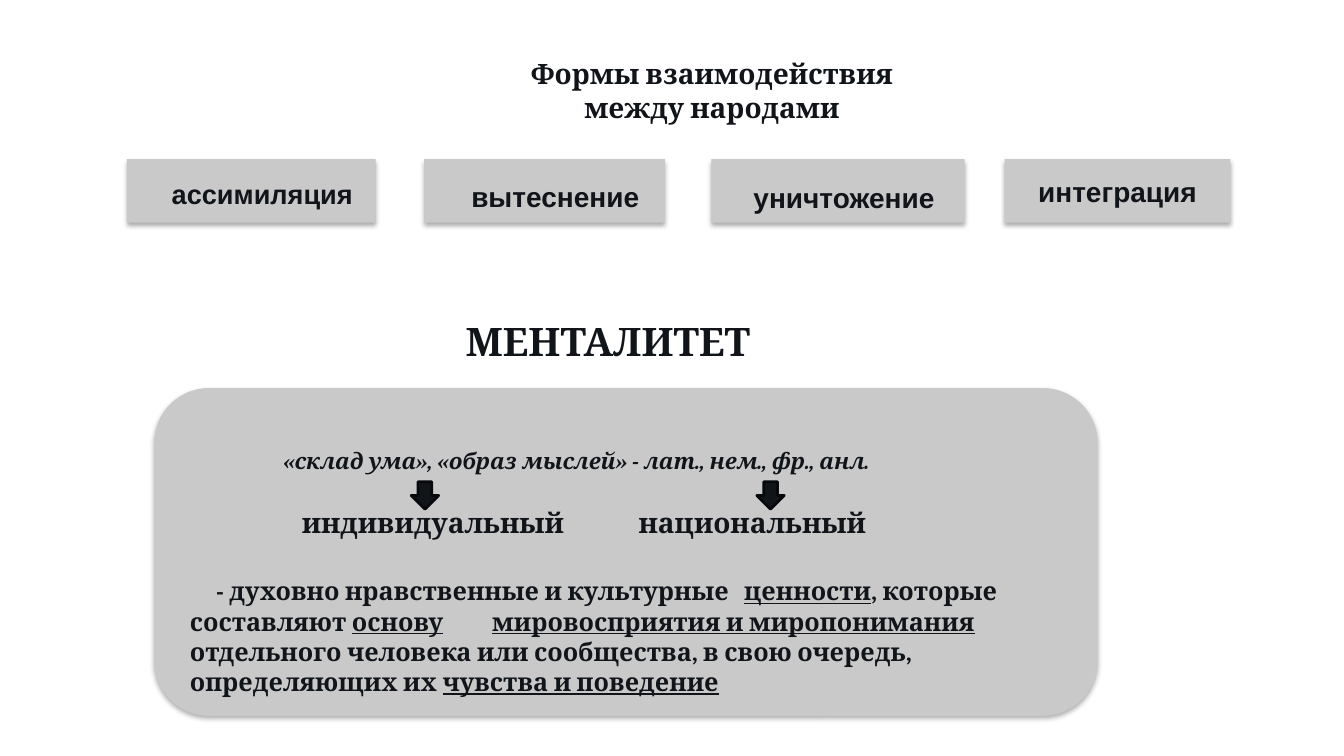
from lxml import etree
from pptx import Presentation
from pptx.dml.color import RGBColor
from pptx.enum.shapes import MSO_SHAPE
from pptx.enum.text import MSO_ANCHOR, PP_ALIGN
from pptx.oxml.ns import qn
from pptx.util import Cm, Pt

RECTANGLE, ROUNDED = MSO_SHAPE.RECTANGLE, MSO_SHAPE.ROUNDED_RECTANGLE
DOWN_ARROW = MSO_SHAPE.DOWN_ARROW
MIDDLE = MSO_ANCHOR.MIDDLE
CENTER, LEFT = PP_ALIGN.CENTER, PP_ALIGN.LEFT
INK = RGBColor(0x11, 0x15, 0x1A)
ARROW_EDGE = RGBColor(0x07, 0x08, 0x0B)
GREY = RGBColor(0xC9, 0xC9, 0xC9)

# Content; lengths in cm
# Forms: label, size, left, width, text shift right, text shift down
FORMS = [
    ("ассимиляция", 19.4, 3.2, 6.27, 0.28, 0.06),
    ("вытеснение", 20, 10.69, 6.07, 0.27, 0.13),
    ("уничтожение", 20, 17.93, 6.38, 0.15, 0.17),
    ("интеграция", 20, 25.32, 5.69, 0, 0),
]
FORMS_TOP, FORMS_HEIGHT = 4.01, 1.6
PANEL = (3.89, 9.78, 23.77, 8.26)

# Headings: text, size, italic, centre x, centre y, width
HEADINGS = [
    ("Формы взаимодействия\vмежду народами", 20, False, 17.94, 2.27, 16.94),
    ("МЕНТАЛИТЕТ", 28, False, 15.32, 8.6, 12),
    ("«склад ума», «образ мыслей» - лат., нем., фр., анл.", 16, True, 14.53, 11.6, 18),
    ("индивидуальный", 20, False, 10.91, 13.15, 8),
    ("национальный", 20, False, 18.96, 13.15, 8),
]
ARROW_CENTERS, ARROW_TOP, ARROW_SIZE = (10.71, 19.42), 12.14, 0.69

# Definition: text, underlined
DEFINITION = [
    ("- духовно нравственные и культурные\t", False),
    ("ценности", True),
    (", которые составляют ", False),
    ("основу\tмировосприятия и миропонимания ", True),
    ("отдельного человека или сообщества, в свою очередь, определяющих их ", False),
    ("чувства и поведение", True),
]
DEFINITION_CENTER, DEFINITION_WIDTH = (16.08, 16.03), 22.59
DEFINITION_INDENT, DEFINITION_TABS = 0.66, (7.23, 14.97)

deck = Presentation()
deck.slide_width, deck.slide_height = Cm(33.87), Cm(19.05)
page = deck.slides.add_slide(deck.slide_layouts[6])


def add_block(kind, left, top, width, height, fill):
    block = page.shapes.add_shape(kind, Cm(left), Cm(top), Cm(width), Cm(height))
    block.shadow.inherit = False
    block.fill.solid()
    block.fill.fore_color.rgb = fill
    block.line.fill.background()
    return block


def add_soft_shadow(block):
    effects = block._element.spPr.find(qn("a:effectLst"))
    shadow = etree.SubElement(effects, qn("a:outerShdw"), blurRad="44450",
                              dist="27940", dir="5400000", rotWithShape="0")
    color = etree.SubElement(shadow, qn("a:srgbClr"), val="000000")
    etree.SubElement(color, qn("a:alpha"), val="32000")


def style(para, name, size, align, italic=False):
    para.alignment = align
    font = para.font
    font.name, font.size = name, Pt(size)
    font.bold, font.italic = True, italic
    font.color.rgb = INK


def add_text(center_x, center_y, width, height):
    box = page.shapes.add_textbox(Cm(center_x - width / 2), Cm(center_y - height / 2),
                                  Cm(width), Cm(height))
    frame = box.text_frame
    frame.word_wrap = True
    frame.vertical_anchor = MIDDLE
    frame.margin_left = frame.margin_right = 0
    frame.margin_top = frame.margin_bottom = 0
    return frame.paragraphs[0]


# Row of forms
for label, size, left, width, right_shift, down_shift in FORMS:
    block = add_block(RECTANGLE, left, FORMS_TOP, width, FORMS_HEIGHT, GREY)
    add_soft_shadow(block)
    frame = block.text_frame
    frame.vertical_anchor = MIDDLE
    frame.margin_left = Cm(0.25 + 2 * right_shift)
    frame.margin_top = Cm(0.13 + 2 * down_shift)
    frame.text = label
    style(frame.paragraphs[0], "Arial", size, CENTER)

# Panel and headings
add_soft_shadow(add_block(ROUNDED, *PANEL, GREY))
for text, size, italic, center_x, center_y, width in HEADINGS:
    para = add_text(center_x, center_y, width, 1.2)
    para.text = text
    style(para, "Cambria", size, CENTER, italic)

# Definition with tab stops
para = add_text(*DEFINITION_CENTER, DEFINITION_WIDTH, 3.2)
properties = para._p.get_or_add_pPr()
properties.set("indent", str(Cm(DEFINITION_INDENT)))
tabs = etree.SubElement(properties, qn("a:tabLst"))
for position in DEFINITION_TABS:
    etree.SubElement(tabs, qn("a:tab"), pos=str(Cm(position)), algn="l")
style(para, "Cambria", 18, LEFT)
for text, underlined in DEFINITION:
    span = para.add_run()
    span.text = text
    span.font.underline = underlined

# Arrows
for center_x in ARROW_CENTERS:
    arrow = add_block(DOWN_ARROW, center_x - ARROW_SIZE / 2, ARROW_TOP,
                      ARROW_SIZE, ARROW_SIZE, INK)
    arrow.line.color.rgb = ARROW_EDGE
    arrow.line.width = Pt(2)

deck.save("out.pptx")
